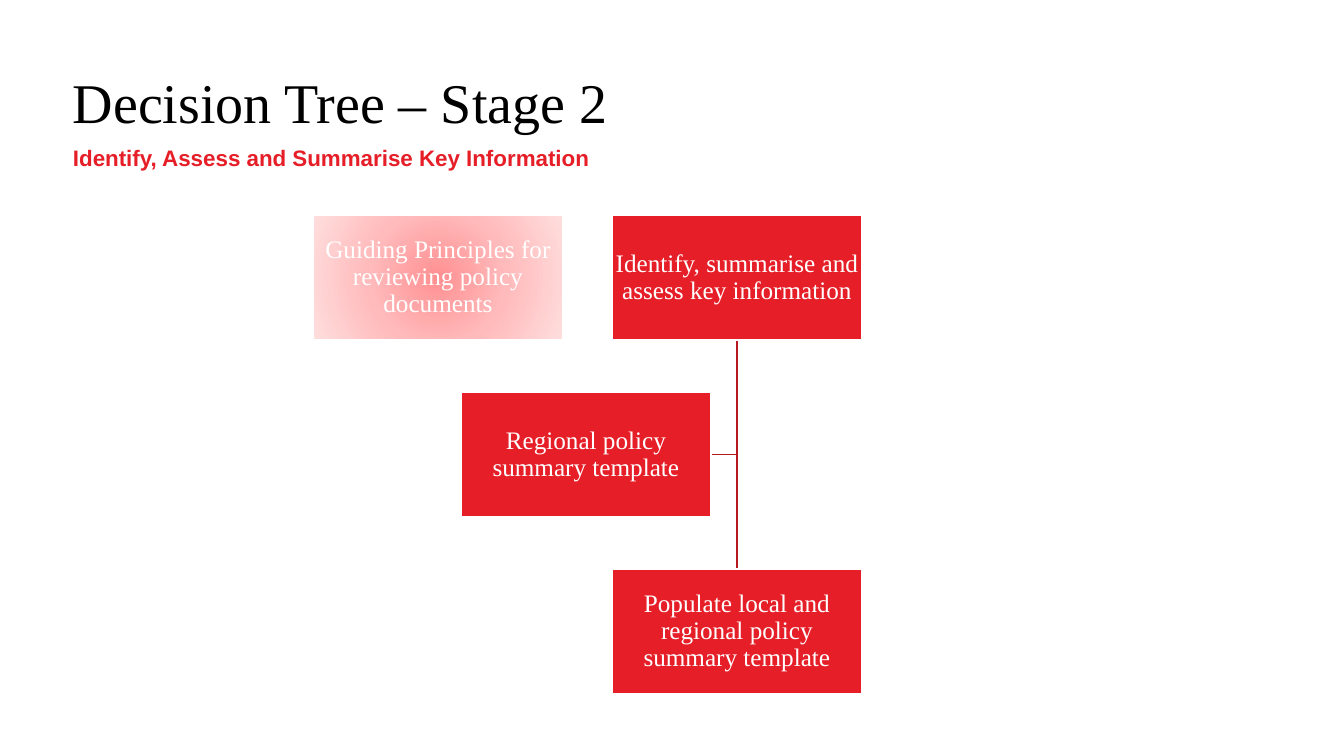
from lxml import etree
from pptx import Presentation
from pptx.dml.color import RGBColor
from pptx.enum.shapes import MSO_CONNECTOR as Connector, MSO_SHAPE as Shape
from pptx.enum.text import MSO_ANCHOR as Anchor, MSO_AUTO_SIZE as AutoSize, PP_ALIGN as Align
from pptx.oxml import parse_xml
from pptx.oxml.ns import nsdecls, qn
from pptx.util import Emu, Pt

RED = RGBColor(0xE6, 0x1E, 0x28)
DARK_RED = RGBColor(0xB8, 0x18, 0x20)
WHITE = RGBColor(0xFF, 0xFF, 0xFF)
BLACK = RGBColor(0, 0, 0)
PALE_STOPS = [(0, "FF9092"), (50, "FFBBBC"), (100, "FFDEDE")]
SERIF, SANS = "Times New Roman", "Arial"


def px(length):
    return Emu(round(length * 914400 / 100.8))


def write(shape, text, font_name, size, color, align, anchor, inset=0):
    frame = shape.text_frame
    frame.text = text
    frame.word_wrap = True
    frame.auto_size = AutoSize.NONE
    frame.vertical_anchor = anchor
    frame.margin_left = frame.margin_right = px(inset)
    frame.margin_top = frame.margin_bottom = px(inset)
    para = frame.paragraphs[0]
    para.alignment = align
    para.space_before = Pt(0)
    para.font.name, para.font.size = font_name, Pt(size)
    para.font.color.rgb = color
    return para


deck = Presentation()
deck.slide_width, deck.slide_height = px(1344), px(756)
page = deck.slides.add_slide(deck.slide_layouts[0])

# Title and subtitle
title, subtitle = page.shapes.title, page.placeholders[1]
headings = [
    (title, "Decision Tree – Stage 2", 73, 995, 58, SERIF, 40, BLACK),
    (subtitle, "Identify, Assess and Summarise Key Information", 144, 587, 27, SANS, 16, RED),
]
for holder, text, top, width, height, font_name, size, color in headings:
    holder.left, holder.top = px(73), px(top)
    holder.width, holder.height = px(width), px(height)
    write(holder, text, font_name, size, color, Align.LEFT, Anchor.TOP)
title.text_frame.paragraphs[0].line_spacing = Pt(44)
subtitle.text_frame.paragraphs[0].font.bold = True

# Tree boxes: left edge, row, text
BOX_WIDTH, BOX_HEIGHT, FIRST_TOP, ROW_STEP = 250, 125, 215, 177
steps = [
    (313, 0, "Guiding Principles for reviewing policy documents"),
    (612, 0, "Identify, summarise and assess key information"),
    (612, 2, "Populate local and regional policy summary template"),
    (461, 1, "Regional policy summary template"),
]
boxes = []
for left, row, text in steps:
    box = page.shapes.add_shape(Shape.RECTANGLE, px(left), px(FIRST_TOP + row * ROW_STEP),
                                px(BOX_WIDTH), px(BOX_HEIGHT))
    box.shadow.inherit = False
    box.fill.solid()
    box.fill.fore_color.rgb = RED
    box.line.color.rgb = WHITE
    box.line.width = Pt(1)
    para = write(box, text, SERIF, 18, WHITE, Align.CENTER, Anchor.MIDDLE, inset=1)
    para.line_spacing = 0.9
    boxes.append(box)
guiding, identify, populate, regional = boxes

# Pale radial fill on the guiding principles box
stops = "".join(f'<a:gs pos="{position * 1000}"><a:srgbClr val="{color}"/></a:gs>'
                for position, color in PALE_STOPS)
gradient = parse_xml(
    f'<a:gradFill {nsdecls("a")} rotWithShape="1"><a:gsLst>{stops}</a:gsLst>'
    '<a:path path="circle"><a:fillToRect l="50000" t="50000" r="50000" b="50000"/></a:path>'
    '</a:gradFill>')
properties = guiding.element.spPr
properties.replace(properties.find(qn("a:solidFill")), gradient)

# Trunk and side branch, behind the boxes
trunk_x = identify.left + identify.width // 2
branch_y = regional.top + regional.height // 2
trunk = page.shapes.add_connector(Connector.STRAIGHT, 0, 0, 0, 0)
trunk.begin_connect(identify, 2)
trunk.end_connect(populate, 0)
branch = page.shapes.add_connector(Connector.STRAIGHT, trunk_x, branch_y, trunk_x, branch_y)
branch.end_connect(regional, 3)
for line in (trunk, branch):
    line.line.color.rgb = DARK_RED
    line.line.width = Pt(1)
    etree.SubElement(line.element.spPr, qn("a:effectLst"))
    guiding.element.addprevious(line.element)

deck.save("out.pptx")
